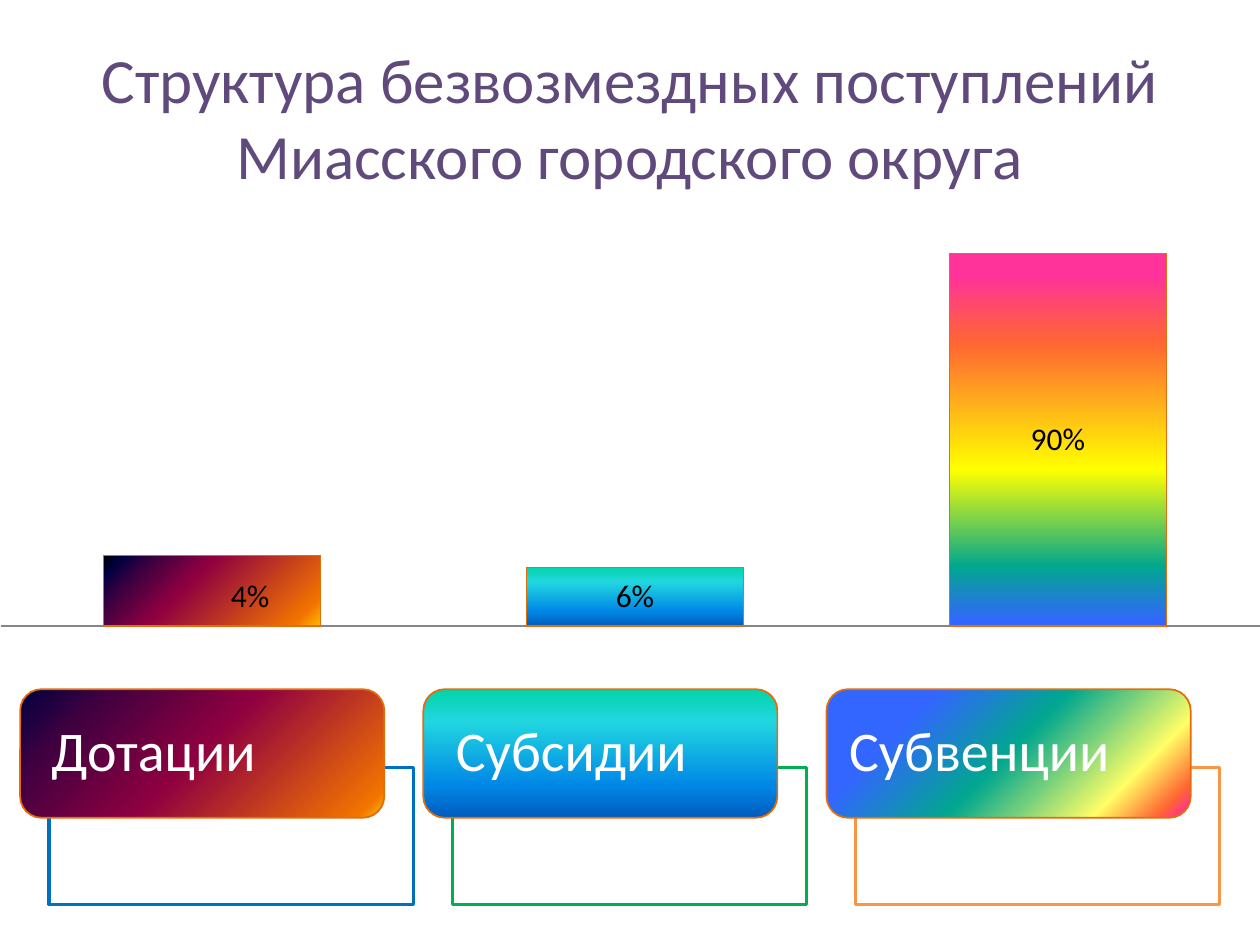
from lxml import etree
from pptx import Presentation
from pptx.chart.data import CategoryChartData
from pptx.dml.color import RGBColor
from pptx.enum.chart import XL_CHART_TYPE, XL_LABEL_POSITION, XL_TICK_LABEL_POSITION, XL_TICK_MARK
from pptx.enum.shapes import MSO_SHAPE
from pptx.enum.text import MSO_ANCHOR, PP_ALIGN
from pptx.oxml import parse_xml
from pptx.oxml.ns import qn
from pptx.util import Inches, Pt

COLUMN_STACKED = XL_CHART_TYPE.COLUMN_STACKED
LABEL_CENTER = XL_LABEL_POSITION.CENTER
NO_LABELS = XL_TICK_LABEL_POSITION.NONE
NO_TICKS = XL_TICK_MARK.NONE
RECTANGLE = MSO_SHAPE.RECTANGLE
ROUNDED = MSO_SHAPE.ROUNDED_RECTANGLE
TOP, MIDDLE = MSO_ANCHOR.TOP, MSO_ANCHOR.MIDDLE
LEFT, CENTER = PP_ALIGN.LEFT, PP_ALIGN.CENTER

FONT = "Calibri"
BORDER = "E46C0A"
CHART_NAMESPACE = "http://schemas.openxmlformats.org/drawingml/2006/chart"
DOWNWARD = {"angle": 90}
FROM_TOP_LEFT = {"focus": {"r": "100000", "b": "100000"}}
FROM_BOTTOM_RIGHT = {"focus": {"l": "100000", "t": "100000"}}

OCEAN = [(0, "03D4A8"), (25, "21D6E0"), (75, "0087E6"), (100, "005CBF")]
SUNSET_BAR = [(0, "000000"), (7, "000040"), (19, "400040"), (39, "8F0040"), (90, "F27300"), (100, "FFBF00")]
SUNSET_CARD = [(0, "000000"), (0, "000040"), (18, "400040"), (49, "8F0040"), (94, "F27300"), (100, "FFBF00")]
RAINBOW_BAR = [(6, "FF3399"), (24, "FF6633"), (58, "FFFF00"), (84, "01A78F"), (99, "3366FF")]
RAINBOW_CARD = [(2, "FF3399"), (7, "FF6633"), (20, "FFFF66"), (50, "01A78F"), (77, "3366FF")]

SERIES_NAME = " " * 11
BARS = [
    (" " * 4, 0.18, "4%", SUNSET_BAR, FROM_TOP_LEFT),
    (" ", 0.15, "6%", OCEAN, DOWNWARD),
    (" ", 0.95, "90%", RAINBOW_BAR, DOWNWARD),
]
CARDS = [
    ("Дотации", 2.89, 0.15, "0070C0", SUNSET_CARD, FROM_TOP_LEFT),
    ("Субсидии", 2.81, 0.16, "00B050", OCEAN, DOWNWARD),
    ("Субвенции", 2.89, 0.08, "F79646", RAINBOW_CARD, FROM_BOTTOM_RIGHT),
]


def color(value):
    """Turn a hex string into a colour."""
    return RGBColor.from_string(value)


def set_gradient(fill, properties, stops, angle=0, focus=None):
    """Give an object a linear gradient, or a circular one around a focus."""
    fill.solid()
    gradient = etree.Element(qn("a:gradFill"), rotWithShape="1")
    stop_list = etree.SubElement(gradient, qn("a:gsLst"))
    for position, value in stops:
        stop = etree.SubElement(stop_list, qn("a:gs"), pos=str(position * 1000))
        etree.SubElement(stop, qn("a:srgbClr"), val=value)
    if focus:
        circle = etree.SubElement(gradient, qn("a:path"), path="circle")
        etree.SubElement(circle, qn("a:fillToRect"), focus)
    else:
        etree.SubElement(gradient, qn("a:lin"), ang=str(angle * 60000), scaled="0")
    properties.replace(properties.find(qn("a:solidFill")), gradient)


def set_line(line, value, width):
    """Set the colour and width of an outline."""
    line.color.rgb = color(value)
    line.width = Pt(width)


def set_font(font, size, value):
    """Set the typeface, size and colour of a font."""
    font.name = FONT
    font.size = Pt(size)
    font.color.rgb = color(value)


def manual_layout(**settings):
    """Build a manual layout for a chart part."""
    parts = "".join(f'<c:{name} val="{value}"/>' for name, value in settings.items())
    return parse_xml(f'<c:layout xmlns:c="{CHART_NAMESPACE}"><c:manualLayout>{parts}</c:manualLayout></c:layout>')


def add_text(slide, text, left, top, width, height, size, value, align=LEFT, anchor=TOP):
    """Place a text box with one paragraph."""
    box = slide.shapes.add_textbox(Inches(left), Inches(top), Inches(width), Inches(height))
    frame = box.text_frame
    frame.word_wrap = True
    frame.vertical_anchor = anchor
    paragraph = frame.paragraphs[0]
    paragraph.alignment = align
    run = paragraph.add_run()
    run.text = text
    set_font(run.font, size, value)


def add_box(slide, kind, left, top, width, height, line_color, line_width):
    """Place an outlined shape without a shadow."""
    shape = slide.shapes.add_shape(kind, Inches(left), Inches(top), Inches(width), Inches(height))
    shape.shadow.inherit = False
    set_line(shape.line, line_color, line_width)
    return shape


def style_bar(point, label, stops, direction):
    """Give a column its gradient, outline and centred label."""
    point_format = point.format
    set_gradient(point_format.fill, point_format.element.get_or_add_spPr(), stops, **direction)
    set_line(point_format.line, BORDER, 0.75)
    run = point.data_label.text_frame.paragraphs[0].add_run()
    run.text = label
    set_font(run.font, 18, "000000")
    point.data_label.position = LABEL_CENTER


def add_share_chart(slide, left, top, width, height):
    """Place the column chart of shares."""
    names, values, *_ = zip(*BARS)
    data = CategoryChartData(number_format="0%")
    data.categories = names
    data.add_series(SERIES_NAME, values)
    chart = slide.shapes.add_chart(
        COLUMN_STACKED, Inches(left), Inches(top), Inches(width), Inches(height), data
    ).chart
    chart.has_title = False
    chart.has_legend = False
    set_font(chart.font, 18, "000000")
    category_axis, value_axis = chart.category_axis, chart.value_axis
    category_axis.major_tick_mark = NO_TICKS
    category_axis.tick_label_position = NO_LABELS
    set_line(category_axis.format.line, "868686", 0.75)
    value_axis.minimum_scale, value_axis.maximum_scale = 0, 1
    value_axis.has_major_gridlines = False
    value_axis.visible = False
    plot = chart.plots[0]
    plot.gap_width, plot.overlap = 95, 100
    plot.vary_by_categories = False
    series = plot.series[0]
    for index, (_, _, *style) in enumerate(BARS):
        style_bar(series.points[index], *style)
    series.data_labels.show_value = True
    series.data_labels.number_format = "0%"
    series.data_labels.number_format_is_linked = False
    for leader_lines in chart.element.iter(qn("c:showLeaderLines")):
        leader_lines.set("val", "0")
    first_label = next(chart.element.iter(qn("c:dLbl")))
    first_label.insert(1, manual_layout(x=0.03, y=0.01))
    plot_area = next(chart.element.iter(qn("c:plotArea")))
    for layout in plot_area.findall(qn("c:layout")):
        plot_area.remove(layout)
    plot_area.insert(0, manual_layout(
        layoutTarget="inner", xMode="edge", yMode="edge", x=0, y=0.154, w=1, h=0.7))


def add_card(slide, left, top, width, text, indent, frame_color, stops, direction):
    """Place a named gradient card over its offset frame."""
    frame = add_box(slide, RECTANGLE, left + 0.23, top + 0.62, width, 1.09, frame_color, 2)
    frame.fill.solid()
    frame.fill.fore_color.rgb = color("FFFFFF")
    white = frame.element.spPr.find(qn("a:solidFill"))[0]
    etree.SubElement(white, qn("a:alpha"), val="90000")
    card = add_box(slide, ROUNDED, left, top, width, 1.02, BORDER, 1)
    set_gradient(card.fill, card.element.spPr, stops, **direction)
    add_text(slide, text, left + indent, top + 0.16, 2.5, 0.64, 32, "FFFFFF")


def add_cards(slide, left, top, pitch):
    """Place the row of cards at an equal pitch."""
    for index, (text, width, *style) in enumerate(CARDS):
        add_card(slide, left + index * pitch, top, width, text, *style)


def main():
    """Build and save the slide."""
    presentation = Presentation()
    presentation.slide_width, presentation.slide_height = Inches(10), Inches(7.5)
    slide = presentation.slides.add_slide(presentation.slide_layouts[6])
    add_text(slide, "Структура безвозмездных поступлений Миасского городского округа",
             0, 0.3, 10, 1.25, 36, "604A7B", align=CENTER, anchor=MIDDLE)
    add_share_chart(slide, 0, 1.17, 10.08, 4.45)
    add_cards(slide, 0.16, 5.47, 3.2)
    presentation.save("out.pptx")


if __name__ == "__main__":
    main()
